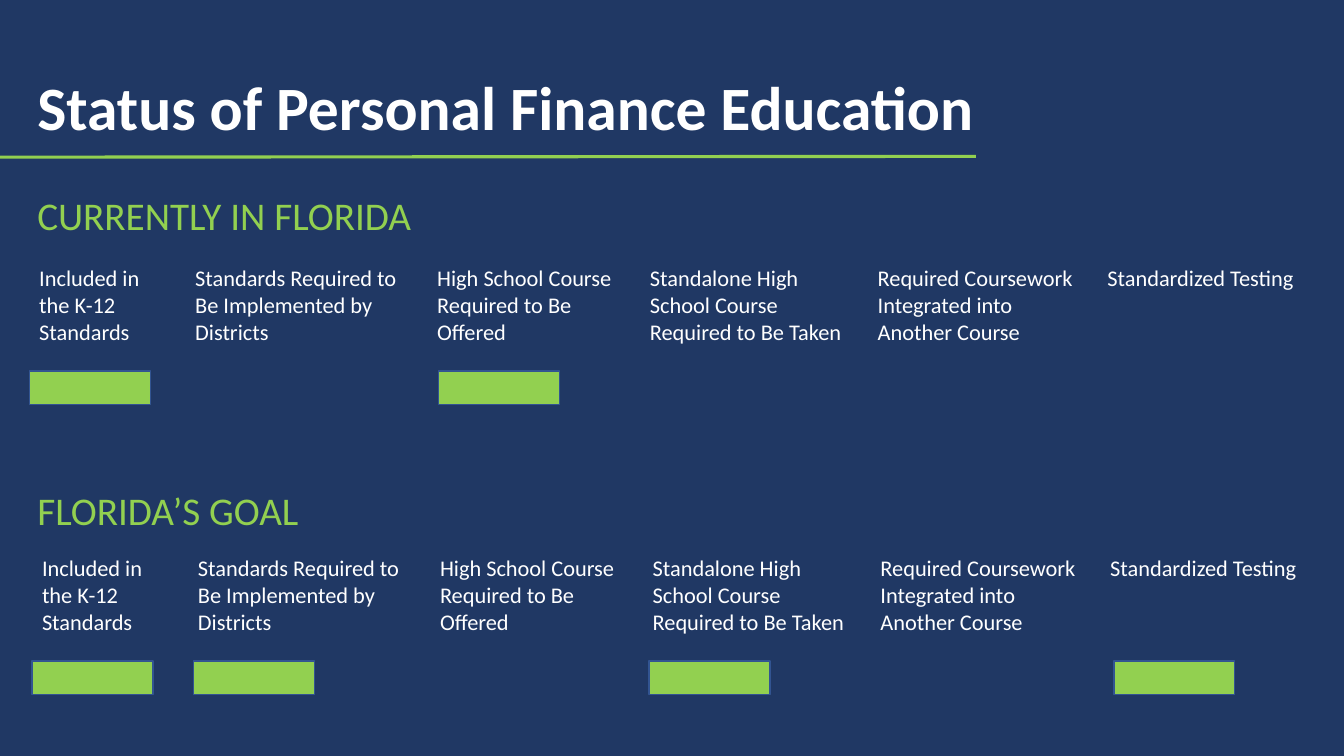
"""Build the slide on the status of personal finance education in Florida."""
from dataclasses import dataclass

from lxml import etree
from pptx import Presentation
from pptx.dml.color import RGBColor
from pptx.enum.shapes import MSO_CONNECTOR as Connector, MSO_SHAPE as Preset
from pptx.enum.text import MSO_AUTO_SIZE as AutoSize
from pptx.oxml.ns import qn
from pptx.slide import Slide
from pptx.util import Cm, Pt

COLORS = {"navy": "203864", "green": "92D050", "outline": "325491", "white": "FFFFFF"}
TITLE_FORMAT = {"size": Pt(44), "bold": True}
HEADING_FORMAT = {"size": Pt(28)}
LABEL_FORMAT = {"size": Pt(16)}
BAR_DROP = 2.82


@dataclass(frozen=True)
class Box:
    left: float
    top: float
    width: float
    height: float

    def lengths(self) -> tuple[Cm, Cm, Cm, Cm]:
        return Cm(self.left), Cm(self.top), Cm(self.width), Cm(self.height)


@dataclass(frozen=True)
class Criterion:
    label: str
    left: float
    width: float
    height: float = 2.31


@dataclass(frozen=True)
class Section:
    heading: str
    heading_top: float
    labels_top: float
    shift: float
    bar_lefts: tuple[float, ...]


CRITERIA = (
    Criterion("Included in the K-12 Standards", 0.74, 3.76),
    Criterion("Standards Required to Be Implemented by Districts", 4.67, 5.69),
    Criterion("High School Course Required to Be Offered", 10.77, 4.95),
    Criterion("Standalone High School Course Required to Be Taken", 16.13, 5.44),
    Criterion("Required Coursework Integrated into Another Course", 21.87, 5.44),
    Criterion("Standardized Testing", 27.66, 5.44, 0.94),
)
SECTIONS = (
    Section("CURRENTLY IN FLORIDA", 4.7, 6.53, 0, (0.74, 11.05)),
    Section("FLORIDA’S GOAL", 12.14, 13.84, 0.07, (0.81, 4.88, 16.36, 28.07)),
)


def color(name: str) -> RGBColor:
    return RGBColor.from_string(COLORS[name])


def add_text(slide: Slide, box: Box, text: str, color_name: str, formats: dict) -> None:
    frame = slide.shapes.add_textbox(*box.lengths()).text_frame
    frame.word_wrap = True
    frame.auto_size = AutoSize.SHAPE_TO_FIT_TEXT
    run = frame.paragraphs[0].add_run()
    run.text = text
    run.font.color.rgb = color(color_name)
    for attribute, value in {"name": "Calibri", **formats}.items():
        setattr(run.font, attribute, value)


def add_bar(slide: Slide, box: Box) -> None:
    shape = slide.shapes.add_shape(Preset.RECTANGLE, *box.lengths())
    shape.shadow.inherit = False
    shape.fill.solid()
    shape.fill.fore_color.rgb = color("green")
    shape.line.color.rgb = color("outline")
    shape.line.width = Pt(1)


def add_title_rule(slide: Slide) -> None:
    rule = slide.shapes.add_connector(
        Connector.STRAIGHT, Cm(0), Cm(3.96), Cm(24.59), Cm(3.94)
    )
    rule.line.color.rgb = color("green")
    rule.line.width = Pt(2.25)
    etree.SubElement(rule._element.spPr, qn("a:effectLst"))


def add_section(slide: Slide, section: Section) -> None:
    heading_box = Box(0.69, section.heading_top, 10.62, 1.45)
    add_text(slide, heading_box, section.heading, "green", HEADING_FORMAT)
    for criterion in CRITERIA:
        label_box = Box(
            criterion.left + section.shift,
            section.labels_top,
            criterion.width,
            criterion.height,
        )
        add_text(slide, label_box, criterion.label, "white", LABEL_FORMAT)
    for left in section.bar_lefts:
        add_bar(slide, Box(left, section.labels_top + BAR_DROP, 3.05, 0.84))


def main() -> None:
    presentation = Presentation()
    presentation.slide_width, presentation.slide_height = Cm(33.87), Cm(19.05)
    slide = presentation.slides.add_slide(presentation.slide_layouts[6])
    slide.background.fill.solid()
    slide.background.fill.fore_color.rgb = color("navy")
    title_box = Box(0.69, 1.6, 26.01, 2.13)
    add_text(slide, title_box, "Status of Personal Finance Education", "white", TITLE_FORMAT)
    add_title_rule(slide)
    for section in SECTIONS:
        add_section(slide, section)
    presentation.save("out.pptx")


if __name__ == "__main__":
    main()
